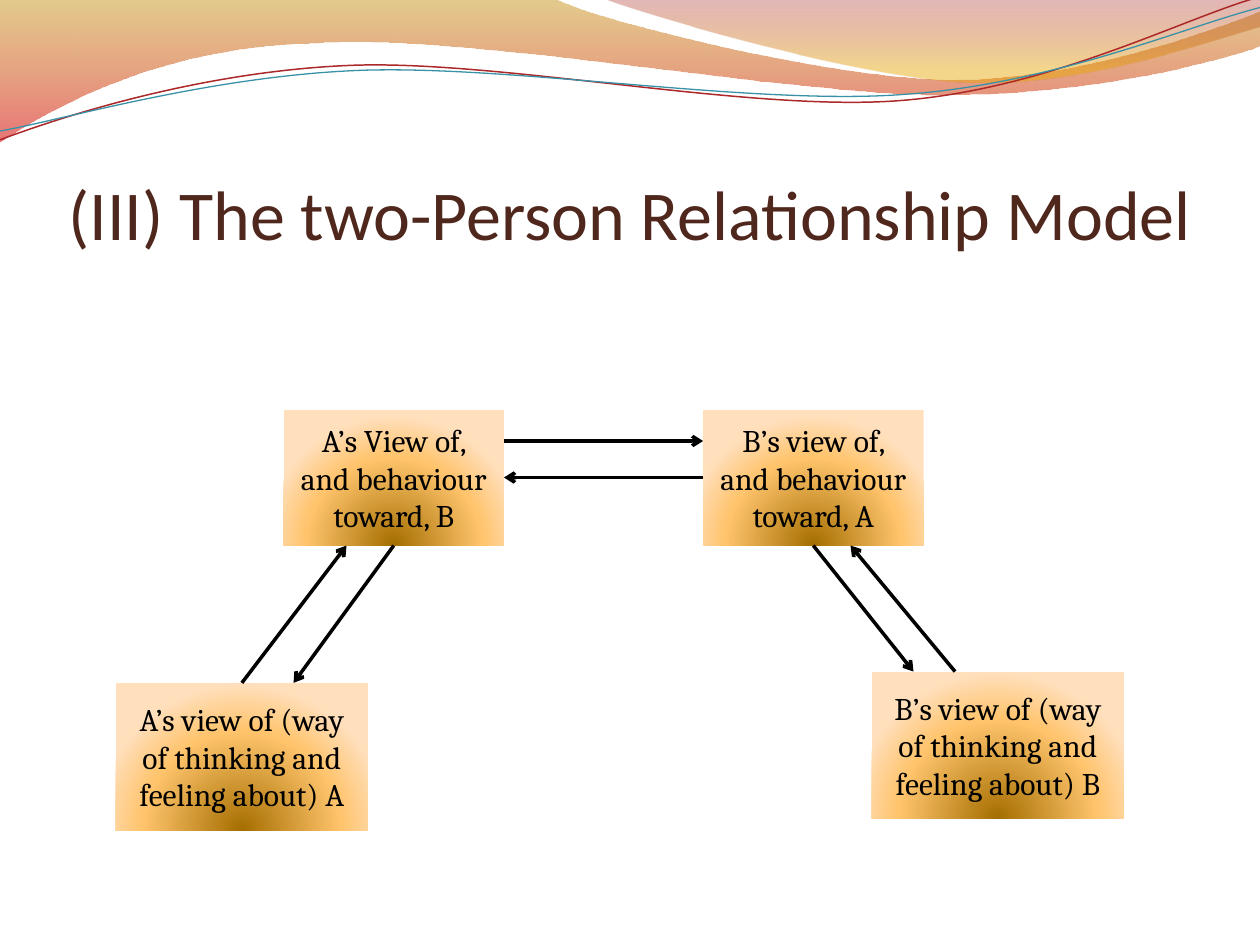
from dataclasses import dataclass

from pptx import Presentation
from pptx.dml.color import RGBColor as RGB
from pptx.enum.shapes import MSO_CONNECTOR as CONN, MSO_SHAPE as SHAPE
from pptx.enum.text import MSO_ANCHOR as ANCHOR, MSO_AUTO_SIZE as FIT, PP_ALIGN as ALIGN
from pptx.oxml import parse_xml
from pptx.oxml.ns import nsdecls, qn
from pptx.util import Inches, Pt


@dataclass(frozen=True)
class Theme:
    """Colours, fonts and sizes of the slide."""
    title_font: str = "Calibri"
    body_font: str = "Cambria"
    title_size: float = 40
    body_size: float = 18
    title: str = "4F271C"
    ink: str = "000000"
    red_line: str = "AC2829"
    teal_line: str = "3891A7"
    arrow_width: float = 2
    box_stops: tuple = ((0, "A56E00", 100), (68, "FFC46C", 100), (100, "FFDFBC", 100))
    warm_stops: tuple = ((0, "C38B00", 45), (100, "D60305", 55))
    rose_stops: tuple = ((0, "A11112", 30), (80, "E9A600", 45))


DOWN = '<a:lin ang="5400000" scaled="0"/>'
GLOW = '<a:path path="circle"><a:fillToRect l="50000" t="130000" r="50000" b="-30000"/></a:path>'

WARM_WAVE = [(0, 0), (4.4, -0.01), (4.76, 0.17, 6.64, 0.63, 7.58, 0.63),
             (8.53, 0.63, 9.58, 0.26, 10, 0.09), (10.01, 0.36),
             (9.83, 0.44, 8.7, 0.76, 7.46, 0.75), (6.22, 0.75, 3.82, 0.28, 2.57, 0.34),
             (1.29, 0.36, 0.46, 0.83, -0.01, 1.13)]
ROSE_WAVE = [(4.79, -0.01), (5.09, 0.11, 6.82, 0.62, 7.69, 0.65),
             (8.56, 0.69, 9.61, 0.32, 10, 0.21), (10, 0)]
RED_CURVE = [(0, 1.11), (0.48, 0.93, 1.58, 0.57, 2.77, 0.52),
             (3.95, 0.47, 5.93, 0.89, 7.13, 0.8), (8.33, 0.71, 9.38, 0.15, 9.98, -0.02)]
TEAL_CURVE = [(0, 1.04), (0.47, 0.96, 1.64, 0.61, 2.83, 0.56),
              (4.03, 0.51, 5.97, 0.84, 7.17, 0.75), (8.36, 0.67, 9.41, 0.21, 10, 0.06)]


def set_gradient(sp, stops, direction):
    """Fill a shape with a gradient of (position, colour, opacity) stops."""
    sp.fill.gradient()
    gs = "".join(f'<a:gs pos="{pos * 1000}"><a:srgbClr val="{color}">'
                 f'<a:alpha val="{alpha * 1000}"/></a:srgbClr></a:gs>'
                 for pos, color, alpha in stops)
    grad = parse_xml(f'<a:gradFill {nsdecls("a")} rotWithShape="1">'
                     f'<a:gsLst>{gs}</a:gsLst>{direction}</a:gradFill>')
    pr = sp._element.spPr
    pr.replace(pr.find(qn("a:gradFill")), grad)


def bend(sp, segments):
    """Merge each three line points of a six-number segment into a cubic curve."""
    lines = iter(list(sp._element.spPr.iter(qn("a:lnTo"))))
    for seg in segments[1:]:
        group = [next(lines) for _ in range(len(seg) // 2)]
        if len(group) == 3:
            cubic = parse_xml(f'<a:cubicBezTo {nsdecls("a")}/>')
            group[0].addprevious(cubic)
            for line in group:
                cubic.append(line[0])
                line.getparent().remove(line)


def write(sp, text, *, font, size, color, anchor=ANCHOR.MIDDLE, align=ALIGN.CENTER, insets=None):
    """Put formatted text in a shape."""
    tf = sp.text_frame
    tf.word_wrap, tf.auto_size, tf.vertical_anchor = True, FIT.NONE, anchor
    if insets:
        tf.margin_left, tf.margin_top, tf.margin_right, tf.margin_bottom = map(Inches, insets)
    p = tf.paragraphs[0]
    p.alignment = align
    r = p.add_run()
    r.text = text
    r.font.name, r.font.size, r.font.color.rgb = font, Pt(size), RGB.from_string(color)


class Deck:
    """Holds the theme and the current slide."""

    def __init__(self, prs, theme):
        """Add a title-only slide to the presentation."""
        self.theme = theme
        self.s = prs.slides.add_slide(prs.slide_layouts[5])

    def title(self, text, x, y, w, h):
        """Place the title above the decoration."""
        sp, t = self.s.shapes.title, self.theme
        sp.left, sp.top, sp.width, sp.height = map(Inches, (x, y, w, h))
        write(sp, text, font=t.title_font, size=t.title_size, color=t.title,
              anchor=ANCHOR.BOTTOM, insets=(0, 0.05, 0, 0))
        self.s.shapes._spTree.append(sp._element)

    def outline(self, segments, close):
        """Draw a curved freeform without shadow."""
        pts = [(Inches(seg[i]), Inches(seg[i + 1]))
               for seg in segments for i in range(0, len(seg), 2)]
        builder = self.s.shapes.build_freeform(*pts[0])
        builder.add_line_segments(pts[1:], close=close)
        sp = builder.convert_to_shape()
        bend(sp, segments)
        sp.shadow.inherit = False
        return sp

    def wave(self, segments, stops):
        """Draw a translucent filled wave."""
        sp = self.outline(segments, True)
        set_gradient(sp, stops, DOWN)
        sp.line.fill.background()

    def curve(self, segments, color, width):
        """Draw a thin open curve."""
        sp = self.outline(segments, False)
        sp.fill.background()
        sp.line.color.rgb, sp.line.width = RGB.from_string(color), Pt(width)

    def box(self, text, x, y, w, h):
        """Draw a glowing box with text."""
        t = self.theme
        sp = self.s.shapes.add_shape(SHAPE.RECTANGLE, *map(Inches, (x, y, w, h)))
        set_gradient(sp, t.box_stops, GLOW)
        sp.line.fill.background()
        sp.shadow.inherit = False
        write(sp, text, font=t.body_font, size=t.body_size, color=t.ink)
        return sp

    def arrow(self, start, end, begin=None, finish=None):
        """Draw an arrow, joined to (box, side) pairs where given."""
        c = self.s.shapes.add_connector(CONN.STRAIGHT, *map(Inches, start + end))
        if begin:
            c.begin_connect(*begin)
        if finish:
            c.end_connect(*finish)
        c.line.color.rgb, c.line.width = RGB.from_string(self.theme.ink), Pt(self.theme.arrow_width)
        c.line._get_or_add_ln().append(parse_xml(f'<a:tailEnd {nsdecls("a")} type="arrow"/>'))
        c._element.spPr.append(parse_xml(f'<a:effectLst {nsdecls("a")}/>'))


def main():
    """Build and save the slide."""
    prs = Presentation()
    prs.slide_width, prs.slide_height = Inches(10), Inches(7.5)
    theme = Theme()
    d = Deck(prs, theme)
    d.wave(WARM_WAVE, theme.warm_stops)
    d.wave(ROSE_WAVE, theme.rose_stops)
    d.curve(RED_CURVE, theme.red_line, 0.85)
    d.curve(TEAL_CURVE, theme.teal_line, 0.75)
    d.title("(III) The two-Person Relationship Model", 0.5, 0.77, 9, 1.25)

    a_other = d.box("A’s View of, and behaviour toward, B", 2.25, 3.25, 1.75, 1.08)
    b_other = d.box("B’s view of, and behaviour toward, A", 5.58, 3.25, 1.75, 1.08)
    a_self = d.box("A’s view of (way of thinking and feeling about) A", 0.92, 5.42, 2, 1.17)
    d.box("B’s view of (way of thinking and feeling about) B", 6.92, 5.33, 2, 1.17)

    d.arrow((4, 3.5), (5.58, 3.5))
    d.arrow((5.58, 3.79), (4, 3.79), (b_other, 1), (a_other, 3))
    d.arrow((3.12, 4.33), (2.33, 5.42), (a_other, 2))
    d.arrow((1.92, 5.42), (2.75, 4.33), (a_self, 0))
    d.arrow((6.46, 4.33), (7.25, 5.33), (b_other, 2))
    d.arrow((7.58, 5.33), (6.75, 4.33))
    prs.save("out.pptx")


if __name__ == "__main__":
    main()
